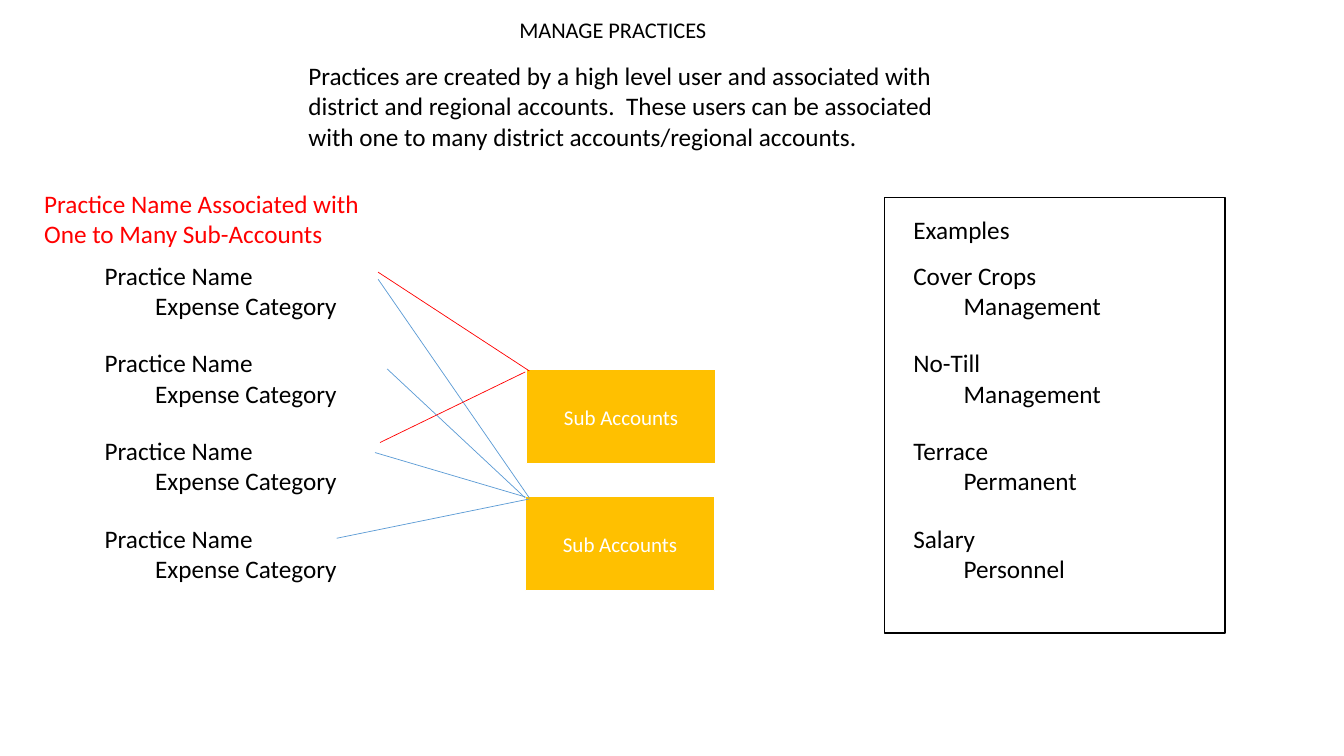
"""Build the Manage Practices slide: practices linked to sub accounts, with examples."""
from pptx import Presentation
from pptx.dml.color import RGBColor
from pptx.enum.shapes import MSO_CONNECTOR as CONN, MSO_SHAPE as SHAPE
from pptx.enum.text import MSO_ANCHOR as ANCHOR, MSO_AUTO_SIZE as AUTO, PP_ALIGN as ALIGN
from pptx.oxml.ns import qn
from pptx.util import Inches, Pt
from lxml.etree import SubElement

BLACK = RGBColor(0x00, 0x00, 0x00)
WHITE = RGBColor(0xFF, 0xFF, 0xFF)
RED = RGBColor(0xFF, 0x00, 0x00)
BLUE = RGBColor(0x5B, 0x9B, 0xD5)
GOLD = RGBColor(0xFF, 0xC0, 0x00)

TITLE = "MANAGE PRACTICES"
INTRO = ("Practices are created by a high level user and associated with district and "
         "regional accounts.  These users can be associated with one to many district "
         "accounts/regional accounts.")
HEADING = ["Practice Name Associated with", "One to Many Sub-Accounts"]
PRACTICE = ["Practice Name", "\tExpense Category"]
EXAMPLES = [("Cover Crops", "Management"), ("No-Till", "Management"),
            ("Terrace", "Permanent"), ("Salary", "Personnel")]
SUB_ACCOUNTS = [(5.22, 3.66), (5.21, 4.92)]
LINKS = [
    (BLUE, (5.25, 4.95), (3.34, 5.34)),
    (BLUE, (5.21, 4.93), (3.72, 4.49)),
    (BLUE, (5.25, 4.94), (3.75, 2.77)),
    (BLUE, (5.21, 4.94), (3.84, 3.66)),
    (RED, (5.25, 3.68), (3.75, 2.70)),
    (RED, (5.21, 3.69), (3.77, 4.39)),
]

ROW_TOP, ROW_PITCH, ROW_H = 2.53, 0.87, 0.71
PRACTICE_X, PRACTICE_W = 0.94, 3.01
EXAMPLE_X, EXAMPLE_W = 8.96, 3.91
SUB_W, SUB_H = 1.88, 0.94


def write(sp, lines, size=18, color=BLACK, align=ALIGN.LEFT, anchor=ANCHOR.TOP, spacing=1.0):
    tf = sp.text_frame
    tf.word_wrap, tf.auto_size, tf.vertical_anchor = True, AUTO.NONE, anchor
    for i, line in enumerate(lines):
        p = tf.add_paragraph() if i else tf.paragraphs[0]
        p.alignment, p.line_spacing = align, spacing
        r = p.add_run()
        r.text = line
        r.font.name, r.font.size, r.font.color.rgb = "Calibri", Pt(size), color
    return tf


def place(sp, *box):
    sp.left, sp.top, sp.width, sp.height = map(Inches, box)
    return sp


def add_text(s, box, lines, **fmt):
    return write(s.shapes.add_textbox(*map(Inches, box)), lines, **fmt)


def add_rect(s, box, line):
    sp = s.shapes.add_shape(SHAPE.RECTANGLE, *map(Inches, box))
    sp.shadow.inherit = False
    sp.line.color.rgb, sp.line.width = line, Pt(1)
    return sp


def add_link(s, color, start, end):
    c = s.shapes.add_connector(CONN.STRAIGHT, *map(Inches, start + end))
    c.line.color.rgb, c.line.width = color, Pt(0.5)
    SubElement(c.element.spPr, qn("a:effectLst"))


def main():
    prs = Presentation()
    prs.slide_width, prs.slide_height = Inches(13.33), Inches(7.5)
    s = prs.slides.add_slide(prs.slide_layouts[5])

    write(place(s.shapes.title, 5.05, 0.11, 3.5, 0.37), [TITLE], size=16)
    add_text(s, (2.96, 0.55, 6.67, 1.01), [INTRO])
    add_text(s, (0.34, 1.82, 5.4, ROW_H), HEADING, color=RED)
    add_text(s, (EXAMPLE_X, 2.08, 1.19, 0.4), ["Examples"])

    for i, (name, category) in enumerate(EXAMPLES):
        top = ROW_TOP + i * ROW_PITCH
        add_text(s, (PRACTICE_X, top, PRACTICE_W, ROW_H), PRACTICE)
        add_text(s, (EXAMPLE_X, top, EXAMPLE_W, ROW_H), [name, "\t" + category])

    for x, y in SUB_ACCOUNTS:
        sp = add_rect(s, (x, y, SUB_W, SUB_H), WHITE)
        sp.fill.solid()
        sp.fill.fore_color.rgb = GOLD
        tf = write(sp, ["Sub Accounts"], size=15, color=WHITE, align=ALIGN.CENTER,
                   anchor=ANCHOR.MIDDLE, spacing=0.9)
        tf.margin_left = tf.margin_right = tf.margin_bottom = Inches(0.01)
        tf.margin_top = Inches(0.05)

    for link in LINKS:
        add_link(s, *link)

    add_rect(s, (8.77, 1.96, 3.38, 4.32), BLACK).fill.background()
    prs.save("out.pptx")


if __name__ == "__main__":
    main()
